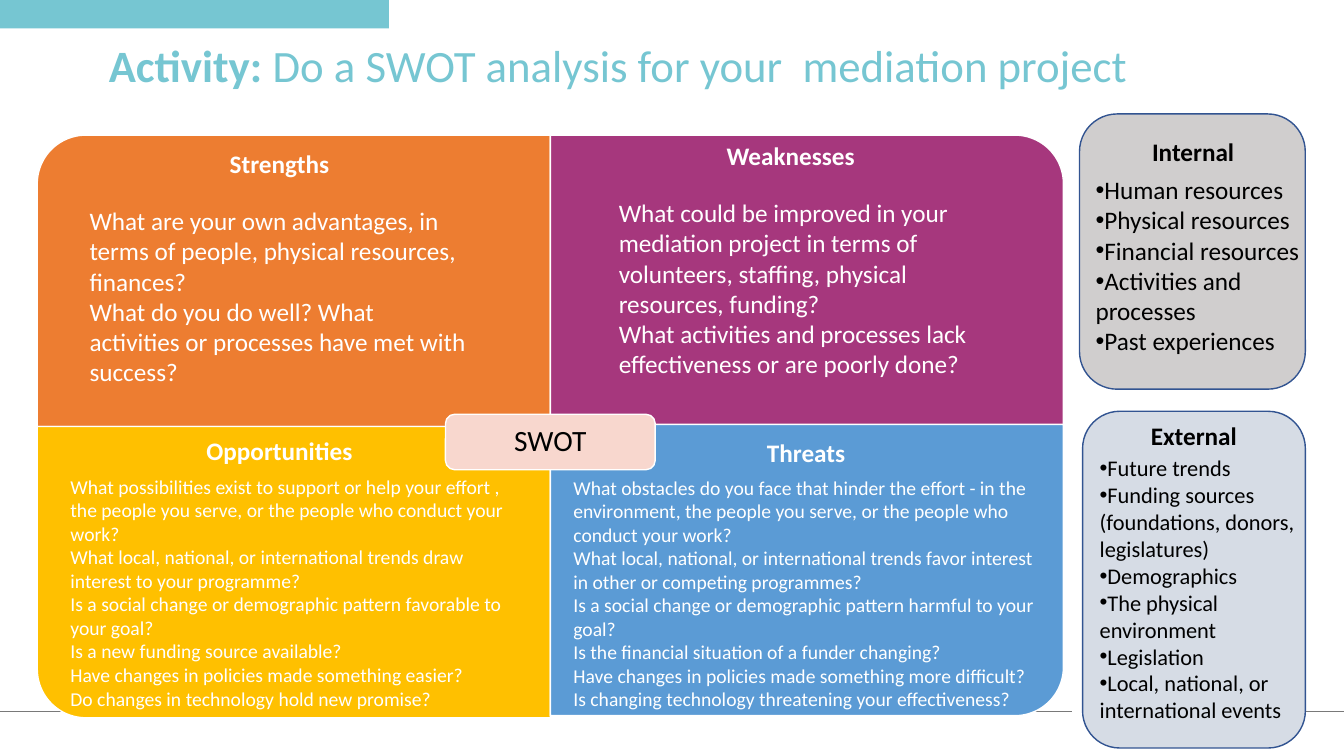
from lxml.etree import SubElement
from pptx import Presentation
from pptx.dml.color import RGBColor
from pptx.enum.shapes import MSO_CONNECTOR as Link, MSO_SHAPE as Kind
from pptx.enum.text import MSO_ANCHOR as Anchor, MSO_AUTO_SIZE as Fit, PP_ALIGN as Align
from pptx.oxml.ns import qn
from pptx.util import Pt

WHITE = RGBColor(0xFF, 0xFF, 0xFF)
BLACK = RGBColor(0, 0, 0)
TEAL = RGBColor(0x76, 0xC6, 0xD2)
GREY = RGBColor(0x79, 0x79, 0x79)
NAVY = RGBColor(0x32, 0x54, 0x91)
PINK = RGBColor(0xF8, 0xD7, 0xCE)
ORANGE = RGBColor(0xED, 0x7D, 0x31)
PURPLE = RGBColor(0xA6, 0x37, 0x7D)
GOLD = RGBColor(0xFF, 0xC0, 0x00)
BLUE = RGBColor(0x5B, 0x9B, 0xD5)
SILVER = RGBColor(0xD0, 0xCE, 0xCE)
MIST = RGBColor(0xD6, 0xDC, 0xE5)

TITLE = ("Activity: ", "Do a SWOT analysis for your  mediation project")

# name, fill, turn, (left, top), head (left, top, width), text (left, top, width), size, lines
QUADS = [
    ("Strengths", ORANGE, 270, (26.6, 96.5), (157, 102.2, 86.4), (56.9, 143.3, 283), 18, [
        "What are your own advantages, in terms of people, physical resources, finances?",
        "What do you do well? What activities or processes have met with success?"]),
    ("Weaknesses", PURPLE, 0, (393.1, 96.5), (511.9, 96.5, 106.6), (434.9, 137.5, 298), 18, [
        "What could be improved in your mediation project in terms of volunteers, "
        "staffing, physical resources, funding?",
        "What activities and processes lack effectiveness or are poorly done?"]),
    ("Opportunities", GOLD, 180, (26.6, 304.6), (140.4, 307.4, 119.5), (43.2, 335.5, 339.8), 14, [
        "What possibilities exist to support or help your effort , the people you serve, "
        "or the people who conduct your work?",
        "What local, national, or international trends draw interest to your programme?",
        "Is a social change or demographic pattern favorable to your goal?",
        "Is a new funding source available?",
        "Have changes in policies made something easier?",
        "Do changes in technology hold new promise?"]),
    ("Threats", BLUE, 90, (393.1, 303.1), (540.7, 308.9, 70.6), (402.5, 336.2, 350.6), 14, [
        "What obstacles do you face that hinder the effort - in the environment, "
        "the people you serve, or the people who conduct your work?",
        "What local, national, or international trends favor interest in other or "
        "competing programmes?",
        "Is a social change or demographic pattern harmful to your goal?",
        "Is the financial situation of a funder changing?",
        "Have changes in policies made something more difficult?",
        "Is changing technology threatening your effectiveness?"]),
]
QUAD_W, QUAD_H = 366.5, 208.1

# name, fill, card box, head (left, top, width), list box, size, items
CARDS = [
    ("Internal", SILVER, (771.1, 81.4, 161.3, 196.6), (815.8, 93.6, 73.4),
     (775.4, 121, 161.3, 159.8), 18,
     ["Human resources", "Physical resources", "Financial resources",
      "Activities and processes", "Past experiences"]),
    ("External", MIST, (773.3, 293.8, 159.1, 240.5), (815, 296.6, 76.3),
     (778.3, 321.1, 181.4, 220.3), 16,
     ["Future trends", "Funding sources (foundations, donors, legislatures)",
      "Demographics", "The physical environment", "Legislation",
      "Local, national, or international events"]),
]
RULES = [(0, 765.4), (915.1, 960)]
RULE_Y = 508.3


def pts(box):
    return [Pt(n) for n in box]


def style(para, size, color, bold=False):
    font = para.font
    font.name, font.size, font.bold = "Calibri", Pt(size), bold
    font.color.rgb = color


def block(kind, box, fill, edge=None):
    shape = shapes.add_shape(kind, *pts(box))
    shape.shadow.inherit = False
    shape.fill.solid()
    shape.fill.fore_color.rgb = fill
    if edge is None:
        shape.line.fill.background()
    else:
        shape.line.color.rgb = edge
        shape.line.width = Pt(1)
    return shape


def label(text, box, size, color, bold=False, wrap=True):
    frame = shapes.add_textbox(*pts(box)).text_frame
    frame.word_wrap = wrap
    para = frame.paragraphs[0]
    para.text = text
    style(para, size, color, bold)


def place(holder, box):
    """Move a placeholder and let its text start at the top at full size."""
    holder.left, holder.top, holder.width, holder.height = pts(box)
    frame = holder.text_frame
    frame.auto_size, frame.vertical_anchor = Fit.NONE, Anchor.TOP
    frame.word_wrap = True
    return frame


def bullets(holder, box, size, items):
    frame = place(holder, box)
    for i, item in enumerate(items):
        para = frame.paragraphs[0] if i == 0 else frame.add_paragraph()
        para.text = item
        para.space_before = Pt(0)
        props = para._p.get_or_add_pPr()
        props.set("marL", "0")
        props.set("indent", "0")
        SubElement(props, qn("a:buChar")).set("char", "•")
        style(para, size, BLACK)
    shapes._spTree.append(holder._element)  # in front of its card


deck = Presentation()
deck.slide_width, deck.slide_height = Pt(960), Pt(540)
slide = deck.slides.add_slide(deck.slide_layouts[3])
shapes = slide.shapes
title, *lists = slide.placeholders

block(Kind.RECTANGLE, (0, 0, 277.9, 20.2), TEAL)
for start, end in RULES:
    rule = shapes.add_connector(Link.STRAIGHT, *pts((start, RULE_Y, end, RULE_Y)))
    rule.line.color.rgb = GREY
    rule.line.width = Pt(0.5)
    SubElement(rule._element.spPr, qn("a:effectLst"))

head = place(title, (26.6, 27.4, 786.2, 57.6)).paragraphs[0]
for text, bold in zip(TITLE, (True, False)):
    run = head.add_run()
    run.text = text
    run.font.bold = bold
head.alignment, head.line_spacing = Align.RIGHT, 0.9
style(head, 32, TEAL, None)

for name, fill, turn, (x, y), spot, area, size, lines in QUADS:
    w, h = (QUAD_H, QUAD_W) if turn % 180 else (QUAD_W, QUAD_H)
    box = (x + (QUAD_W - w) / 2, y + (QUAD_H - h) / 2, w, h)
    block(Kind.ROUND_1_RECTANGLE, box, fill, WHITE).rotation = turn
    label(name, (*spot, 29), 18, WHITE, True, False)
    label("\n".join(lines), (*area, len(lines) * size * 1.2), size, WHITE)

hub = block(Kind.ROUNDED_RECTANGLE, (318.2, 295.9, 149.8, 39.6), PINK, WHITE)
hub.text_frame.vertical_anchor = Anchor.MIDDLE
core = hub.text_frame.paragraphs[0]
core.text, core.alignment = "SWOT", Align.CENTER
core.line_spacing = 0.9
style(core, 21, BLACK)

for holder, (name, fill, box, spot, area, size, items) in zip(lists, CARDS):
    block(Kind.ROUNDED_RECTANGLE, box, fill, NAVY)
    label(name, (*spot, 29), 18, BLACK, True, False)
    bullets(holder, area, size, items)

deck.save("out.pptx")
